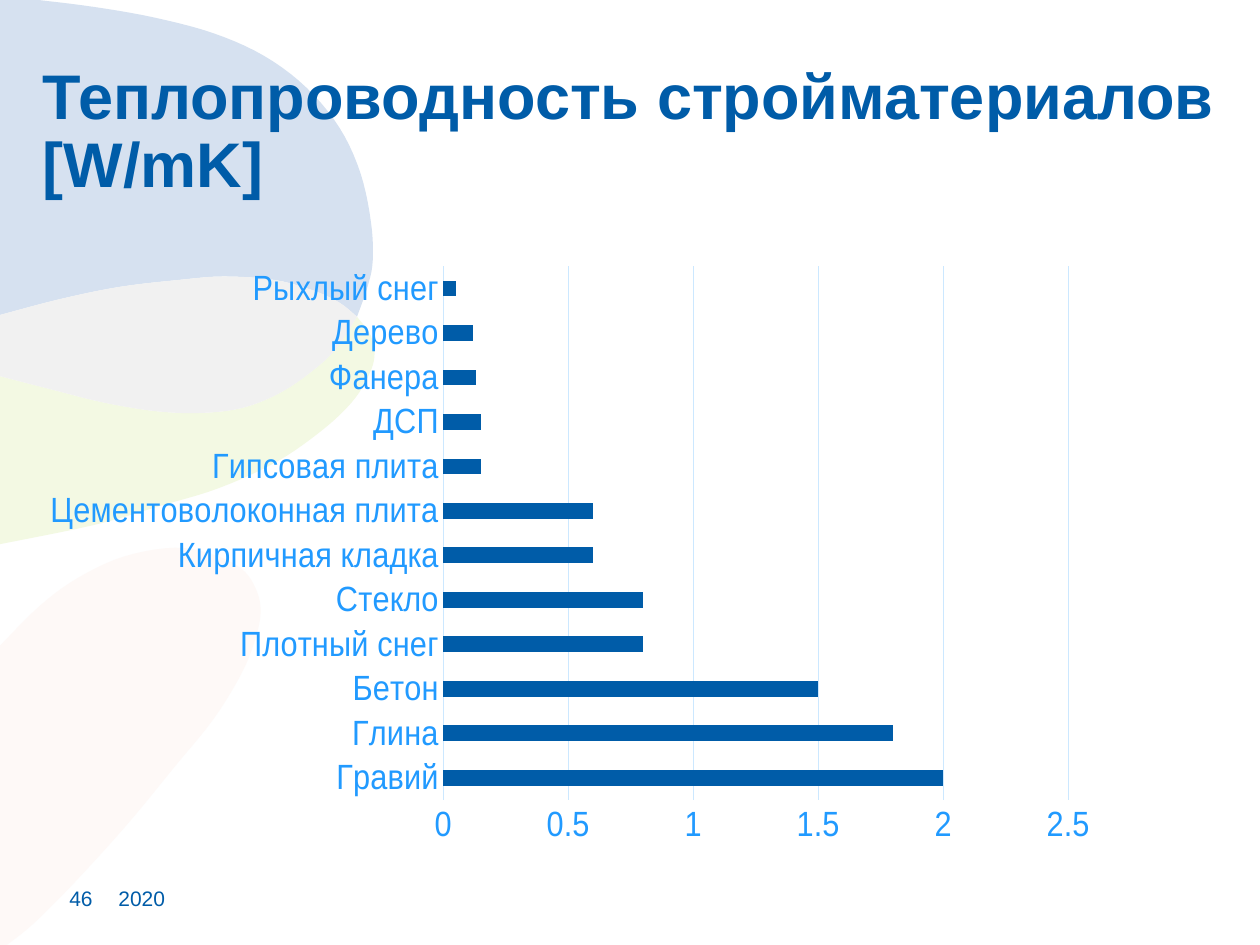
from lxml import etree
from pptx import Presentation
from pptx import util as u
from pptx.chart.data import CategoryChartData
from pptx.dml.color import RGBColor
from pptx.enum import chart as charts, text
from pptx.oxml import parse_xml
from pptx.oxml.ns import nsdecls, qn

FONT = "Arial"
NAVY, SKY, PALE = "005CA8", "219AFF", "CCE8FF"

TITLE = "Теплопроводность стройматериалов [W/mK]"
CONDUCTIVITY = [
    ("Гравий", 2), ("Глина", 1.8), ("Бетон", 1.5), ("Плотный снег", 0.8),
    ("Стекло", 0.8), ("Кирпичная кладка", 0.6),
    ("Цементоволоконная плита", 0.6), ("Гипсовая плита", 0.15),
    ("ДСП", 0.15), ("Фанера", 0.13), ("Дерево", 0.12), ("Рыхлый снег", 0.05),
]
PLOT = {"x": 0.291, "y": 0.124, "w": 0.686, "h": 0.802}

# Text boxes: content, (left, top, width, height), anchor, format
SMALL = {"name": FONT, "size": u.Pt(12)}
TEXTS = [
    ("2020", (67.7, 509, 50.4, 11.5), text.MSO_ANCHOR.BOTTOM, SMALL),
    ("46", (39.6, 509, 28, 11.5), text.MSO_ANCHOR.BOTTOM, SMALL),
    (TITLE, (24.5, 37.4, 673.2, 46), text.MSO_ANCHOR.TOP,
     {"name": FONT, "size": u.Pt(36), "bold": True}),
]

# Curves of the background petals, in points
CREST = [(22, 0), (54, 4), (88, 10), (122, 19), (151, 32), (175, 50), (194, 73),
         (206, 99), (212, 127), (213, 149), (210, 164), (204, 181)]
OVERLAP_TOP = [(0, 180), (34, 171), (68, 164), (102, 160), (128, 158),
               (157, 160), (179, 166), (194, 173), (204, 181)]
OVERLAP_BOTTOM = [(0, 215), (31, 223), (59, 230), (89, 235), (115, 236),
                  (139, 233), (161, 224), (181, 210), (193, 198), (204, 181)]
GREEN_EDGE = [(204, 181), (212, 192), (214, 204), (210, 216), (201, 230),
              (184, 246), (158, 264), (125, 279), (92, 289), (54, 300), (0, 311)]
PINK_EDGE = [(0, 369), (23, 346), (45, 330), (71, 318), (100, 313), (122, 317),
             (138, 325), (146, 336), (149, 349), (146, 365), (138, 385),
             (122, 411), (100, 438), (72, 472), (42, 505), (19, 528), (4, 540)]
# Petals: fill and the curves that make the outline, joined by straight lines
PETALS = [
    ("FEF9F7", [PINK_EDGE, [(0, 540)]]),
    ("F3F9E3", [OVERLAP_BOTTOM, GREEN_EDGE]),
    ("D6E1F0", [[(0, 0)], CREST, OVERLAP_TOP[::-1]]),
    ("F1F1F1", [OVERLAP_TOP, OVERLAP_BOTTOM[::-1]]),
]


def color(value):
    return RGBColor.from_string(value)


def set_font(font, values, shade):
    for name, value in values.items():
        setattr(font, name, value)
    font.color.rgb = color(shade)


def set_line(line, shade):
    line.color.rgb = color(shade)
    line.width = u.Pt(0.75)


def smooth(knots, steps=5):
    """Catmull-Rom curve through the knots."""
    padded = [knots[0], *knots, knots[-1]]
    points = [knots[0]]
    for a, b, c, d in zip(padded, padded[1:], padded[2:], padded[3:]):
        for step in range(1, steps + 1):
            t = step / steps
            points.append(tuple(
                (2 * q + (r - p) * t + (2 * p - 5 * q + 4 * r - s) * t ** 2
                 + (3 * q - p - 3 * r + s) * t ** 3) / 2
                for p, q, r, s in zip(a, b, c, d)))
    return points


def add_petal(page, fill, curves):
    outline = [(u.Pt(x), u.Pt(y)) for curve in curves for x, y in smooth(curve)]
    builder = page.shapes.build_freeform(*outline[0])
    builder.add_line_segments(outline[1:], close=True)
    petal = builder.convert_to_shape()
    petal.shadow.inherit = False
    petal.fill.solid()
    petal.fill.fore_color.rgb = color(fill)
    petal.line.fill.background()


def add_text(page, content, place, anchor, values):
    box = page.shapes.add_textbox(*map(u.Pt, place))
    frame = box.text_frame
    frame.word_wrap = True
    frame.vertical_anchor = anchor
    for side in ("left", "top", "right", "bottom"):
        setattr(frame, "margin_" + side, 0)
    para = frame.paragraphs[0]
    para.line_spacing = 0.9 if content == TITLE else 1.0
    span = para.add_run()
    span.text = content
    set_font(span.font, values, NAVY)


def add_bars(page):
    data = CategoryChartData()
    data.categories = [name for name, _ in CONDUCTIVITY]
    data.add_series("Series 1", [value for _, value in CONDUCTIVITY])
    chart = page.shapes.add_chart(
        charts.XL_CHART_TYPE.BAR_CLUSTERED,
        *map(u.Pt, (28.8, 105.1, 594, 380.2)), data).chart
    chart.has_legend = chart.has_title = False
    set_font(chart.font, {"name": FONT, "size": u.Pt(10)}, NAVY)

    plot = chart.plots[0]
    plot.gap_width = 182
    plot.vary_by_categories = False
    bars = plot.series[0].format.fill
    bars.solid()
    bars.fore_color.rgb = color(NAVY)

    # Axes
    for axis in (chart.category_axis, chart.value_axis):
        axis.major_tick_mark = axis.minor_tick_mark = charts.XL_TICK_MARK.NONE
        set_font(axis.tick_labels.font, {"name": FONT, "size": u.Pt(20)}, SKY)
    set_line(chart.category_axis.format.line, PALE)
    scale = chart.value_axis
    scale.minimum_scale, scale.maximum_scale, scale.major_unit = 0, 2.5, 0.5
    scale.format.line.fill.background()
    set_line(scale.major_gridlines.format.line, PALE)

    # Fixed inner plot area
    area = chart.plots[0]._element.getparent()
    for old in area.findall(qn("c:layout")):
        area.remove(old)
    layout = parse_xml(f"<c:layout {nsdecls('c')}><c:manualLayout/></c:layout>")
    settings = [("layoutTarget", "inner"), ("xMode", "edge"), ("yMode", "edge"),
                *PLOT.items()]
    for tag, value in settings:
        etree.SubElement(layout[0], qn("c:" + tag)).set("val", str(value))
    area.insert(0, layout)


def main():
    deck = Presentation()
    deck.slide_width, deck.slide_height = u.Pt(720), u.Pt(540)
    page = deck.slides.add_slide(deck.slide_layouts[6])
    for fill, curves in PETALS:
        add_petal(page, fill, curves)
    add_bars(page)
    for item in TEXTS:
        add_text(page, *item)
    deck.save("out.pptx")


if __name__ == "__main__":
    main()
